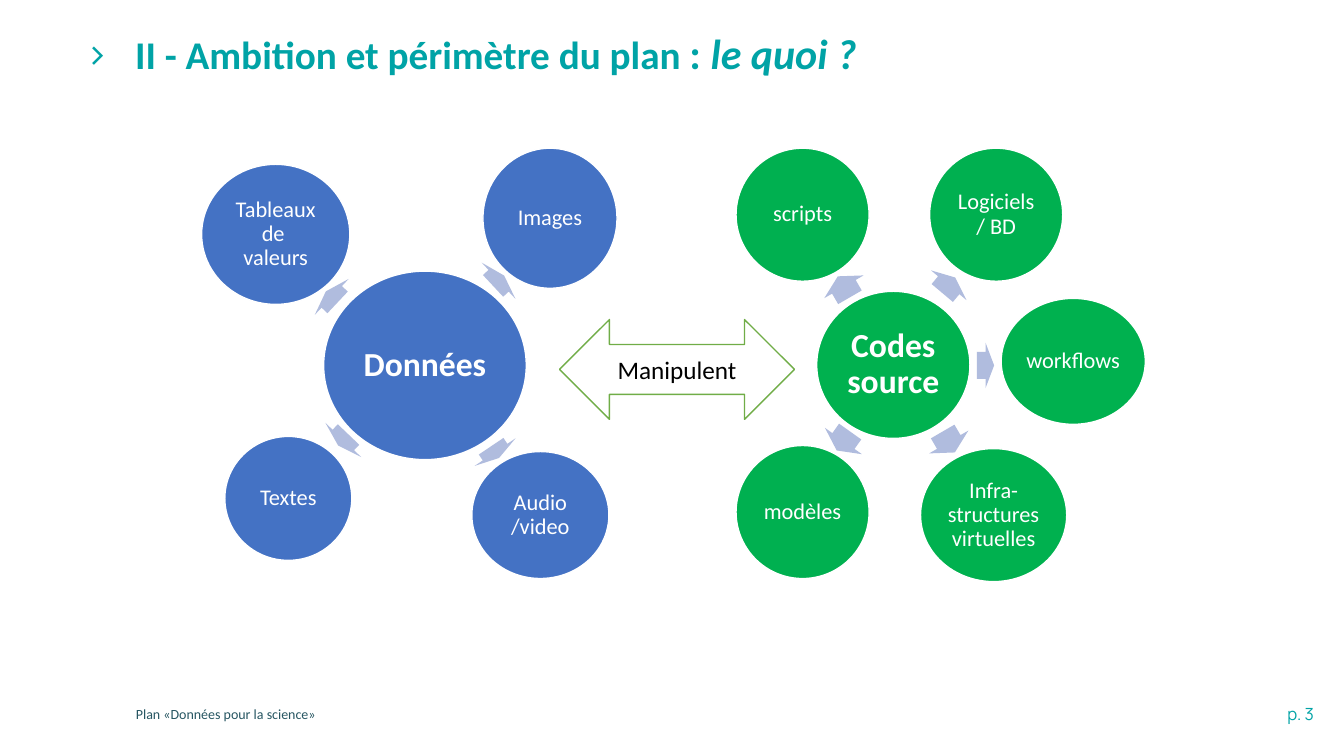
from lxml import etree
from pptx import Presentation
from pptx.dml.color import RGBColor
from pptx.enum.shapes import MSO_SHAPE
from pptx.enum.text import MSO_ANCHOR, MSO_AUTO_SIZE, PP_ALIGN
from pptx.oxml.ns import qn
from pptx.util import Inches, Pt

ELLIPSE, ARROW, DOUBLE_ARROW = MSO_SHAPE.OVAL, MSO_SHAPE.RIGHT_ARROW, MSO_SHAPE.LEFT_RIGHT_ARROW
LEFT, CENTER, RIGHT = PP_ALIGN.LEFT, PP_ALIGN.CENTER, PP_ALIGN.RIGHT
MIDDLE = MSO_ANCHOR.MIDDLE

THEME = {
    "teal": "00A3A6", "navy": "275662", "white": "FFFFFF", "black": "000000",
    "blue": "4472C4", "green": "00B14F", "leaf": "00B050", "edge": "70AD47", "arrow": "B0BCDE",
    "body": "Calibri", "accent": "Manrope",
    "title": 28, "title_end": 30, "hub": 24, "link": 18, "node": 16, "page": 12, "footer": 10,
}

TITLE = [
    ("II - Ambition et périmètre du plan ", {"size": "title"}),
    (": ", {"size": "title_end"}),
    ("le quoi\u00a0?", {"size": "title_end", "italic": True}),
]
TITLE_BOX = (0.84, 0.07, 11.17, 0.97)
LINK = ("Manipulent", (5.55, 3.17, 2.33, 0.99))
FOOTER = ("Plan «Données pour la science»", (1.25, 6.95, 7.34, 0.28))
PAGE = ("p. 3", (10.85, 6.93, 2.28, 0.3))

# Each hub: lines, box, colour; each satellite: lines, box, colour, arrow box, arrow rotation
CLUSTERS = [
    ((["Données"], (3.21, 2.69, 2.01, 1.87), "blue"), [
        (["Tableaux", "de ", "valeurs"], (2, 1.63, 1.47, 1.39), "blue", (3.21, 2.7, 0.16, 0.49), 223.3),
        (["Images"], (4.79, 1.47, 1.33, 1.39), "blue", (4.87, 2.54, 0.15, 0.49), 317),
        (["Audio /video"], (4.68, 4.48, 1.36, 1.26), "blue", (4.84, 4.24, 0.14, 0.49), 56),
        (["Textes"], (2.23, 4.33, 1.26, 1.23), "blue", (3.33, 4.12, 0.15, 0.49), 133.7),
    ]),
    ((["Codes", "source"], (8.1, 2.89, 1.52, 1.46), "green"), [
        (["scripts"], (7.3, 1.47, 1.32, 1.32), "leaf", (8.25, 2.62, 0.24, 0.45), 239.9),
        (["workflows"], (9.93, 2.96, 1.43, 1.25), "green", (9.69, 3.4, 0.17, 0.45), 0),
        (["Infra-structures", "virtuelles"], (9.13, 4.45, 1.45, 1.32), "green", (9.29, 4.16, 0.24, 0.45), 59.8),
        (["modèles"], (7.3, 4.42, 1.32, 1.32), "leaf", (8.25, 4.15, 0.23, 0.45), 125.5),
        (["Logiciels / BD"], (9.22, 1.47, 1.32, 1.32), "leaf", (9.31, 2.6, 0.2, 0.46), 310),
    ]),
]


def color(name):
    return RGBColor.from_string(THEME[name])


def inches(box):
    return [Inches(v) for v in box]


def add_run(p, text, size, ink, font="body", **style):
    r = p.add_run()
    r.text = text
    formats = {"name": THEME[font], "size": Pt(THEME[size]), **style}
    for key, value in formats.items():
        setattr(r.font, key, value)
    r.font.color.rgb = color(ink)


def write(tf, lines, align, spacing=1.0, **run_format):
    tf.word_wrap = True
    for i, line in enumerate(lines):
        p = tf.paragraphs[0] if i == 0 else tf.add_paragraph()
        p.alignment, p.line_spacing = align, spacing
        add_run(p, line, **run_format)


def add_shape(s, kind, box, fill, line=None):
    sp = s.shapes.add_shape(kind, *inches(box))
    sp.shadow.inherit = False
    sp.fill.solid()
    sp.fill.fore_color.rgb = color(fill)
    if line:
        sp.line.color.rgb = color(line)
        sp.line.width = Pt(1)
    else:
        sp.line.fill.background()
    return sp


def add_node(s, lines, box, fill, size, inset, bold=False):
    tf = add_shape(s, ELLIPSE, box, fill, "white").text_frame
    tf.vertical_anchor = MIDDLE
    for side in ("left", "right", "top", "bottom"):
        setattr(tf, f"margin_{side}", Inches(inset))
    write(tf, lines, CENTER, 0.9, size=size, ink="white", bold=bold)


def add_arrow(s, box, rotation):
    sp = add_shape(s, ARROW, box, "arrow")
    sp.adjustments[0], sp.adjustments[1] = 0.6, 0.5
    sp.rotation = rotation


def add_label(s, text, box, align, **run_format):
    tf = s.shapes.add_textbox(*inches(box)).text_frame
    write(tf, [text], align, **run_format)
    tf.auto_size = MSO_AUTO_SIZE.SHAPE_TO_FIT_TEXT


def add_title(s):
    sp = s.shapes.title
    sp.left, sp.top, sp.width, sp.height = inches(TITLE_BOX)
    tf = sp.text_frame
    tf.margin_left = 0
    tf.vertical_anchor, tf.auto_size, tf.word_wrap = MIDDLE, MSO_AUTO_SIZE.NONE, True
    p = tf.paragraphs[0]
    p.alignment, p.line_spacing = LEFT, 0.9
    pPr = p._p.get_or_add_pPr()
    pPr.set("marL", str(Inches(0.5)))
    pPr.set("indent", str(-Inches(0.5)))
    etree.SubElement(pPr, qn("a:buFont")).set("typeface", THEME["accent"])
    etree.SubElement(pPr, qn("a:buChar")).set("char", ">")
    for text, style in TITLE:
        add_run(p, text, ink="teal", bold=True, **style)


def main():
    prs = Presentation()
    prs.slide_width, prs.slide_height = Inches(13.33), Inches(7.5)
    s = prs.slides.add_slide(prs.slide_layouts[5])
    add_title(s)
    add_label(s, *PAGE, RIGHT, size="page", ink="teal", font="accent")
    add_label(s, *FOOTER, LEFT, size="footer", ink="navy")

    for hub, satellites in CLUSTERS:
        add_node(s, *hub, size="hub", inset=0.03, bold=True)
        for lines, box, fill, arrow_box, rotation in satellites:
            add_arrow(s, arrow_box, rotation)
            add_node(s, lines, box, fill, size="node", inset=0.02)

    text, box = LINK
    link = add_shape(s, DOUBLE_ARROW, box, "white", "edge")
    link.text_frame.vertical_anchor = MIDDLE
    write(link.text_frame, [text], CENTER, size="link", ink="black")
    prs.save("out.pptx")


if __name__ == "__main__":
    main()
